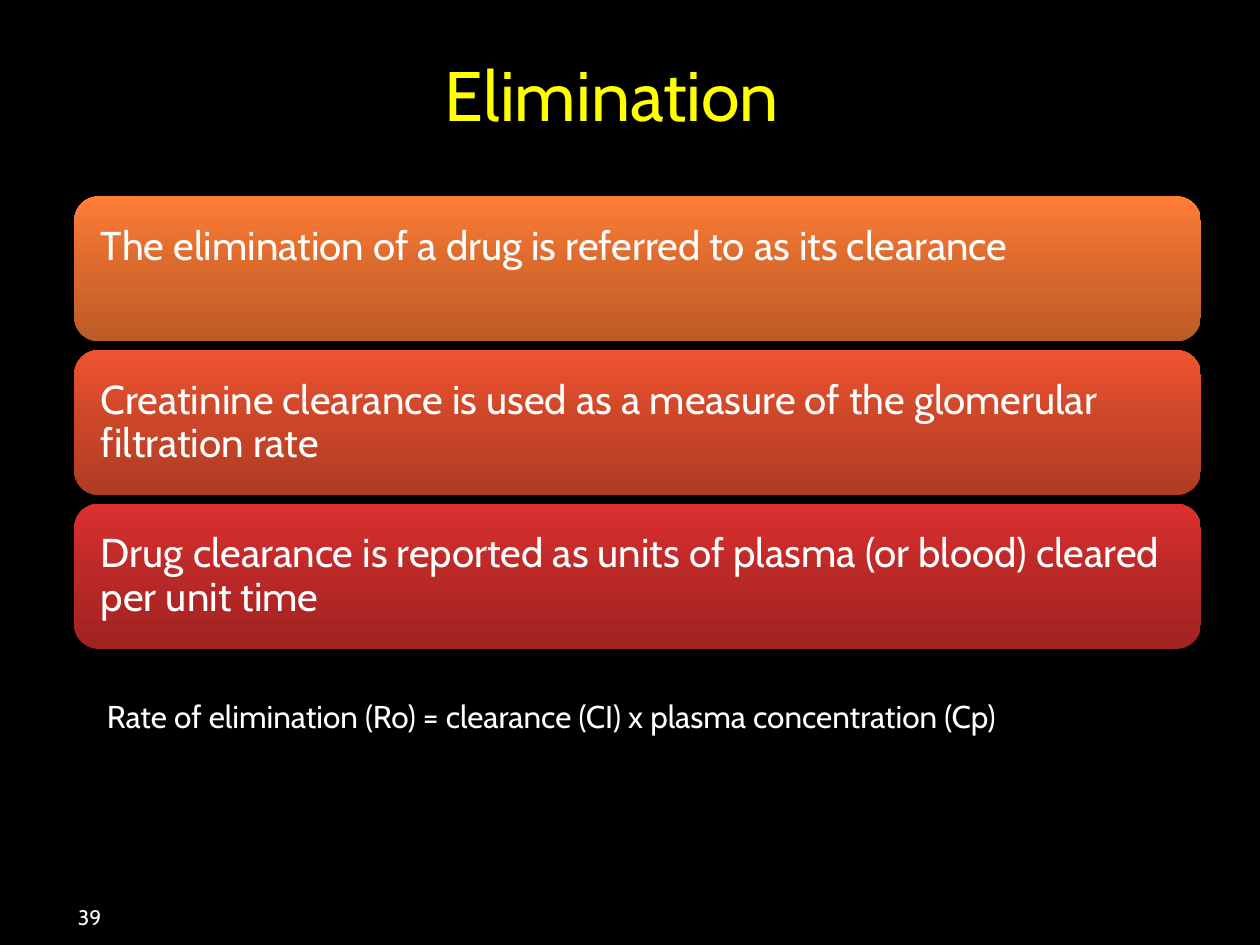
import pptx
import pptx.util
import pptx.dml.color
import pptx.enum.shapes
import pptx.enum.text
import pptx.oxml
import pptx.oxml.ns

Pt = pptx.util.Pt
RGB = pptx.dml.color.RGBColor
Anchor = pptx.enum.text.MSO_ANCHOR
Align = pptx.enum.text.PP_ALIGN

# Content
TITLE = "Elimination"
BARS = [  # text, gradient from bottom to top
    ("The elimination of a drug is referred to as its clearance",
     ("BC5B26", "DD6B2D", "FF7D37")),
    ("Creatinine clearance is used as a measure of the glomerular filtration rate",
     ("AF3C23", "CE4729", "F05330")),
    ("Drug clearance is reported as units of plasma (or blood) cleared per unit time",
     ("A02322", "BC2A28", "DC302F")),
]
RULE = "Rate of elimination (Ro) = clearance (CI) x plasma concentration (Cp)"
PAGE = "39"

# Style
FONT = "Cabin"
BLACK = RGB(0, 0, 0)
WHITE = RGB(255, 255, 255)
YELLOW = RGB(255, 255, 0)
STOPS = (0, 55, 100)

# Bar layout
LEFT, TOP, WIDE, HIGH, STEP = 42.5, 112.3, 643.7, 82.8, 87.85


def write(frame, text, size, color, pads, anchor=Anchor.TOP, wrap=True):
    frame.word_wrap = wrap
    frame.auto_size = pptx.enum.text.MSO_AUTO_SIZE.NONE
    frame.vertical_anchor = anchor
    (frame.margin_left, frame.margin_top,
     frame.margin_right, frame.margin_bottom) = [Pt(p) for p in pads]
    para = frame.paragraphs[0]
    para.alignment = Align.LEFT
    run = para.add_run()
    run.text = text
    run.font.name = FONT
    run.font.size = Pt(size)
    run.font.color.rgb = color
    return para


def shade(shape, colors):
    stops = "".join(
        f'<a:gs pos="{pos * 1000}"><a:srgbClr val="{color}"/></a:gs>'
        for pos, color in zip(STOPS, colors))
    shape.fill.gradient()
    shape.fill.gradient_angle = 90
    grad = shape.element.spPr.find(pptx.oxml.ns.qn("a:gradFill"))
    new = pptx.oxml.parse_xml(
        f'<a:gsLst {pptx.oxml.ns.nsdecls("a")}>{stops}</a:gsLst>')
    grad.replace(grad.find(pptx.oxml.ns.qn("a:gsLst")), new)


def main():
    deck = pptx.Presentation()
    deck.slide_width, deck.slide_height = Pt(720), Pt(540)
    slide = deck.slides.add_slide(deck.slide_layouts[5])
    slide.background.fill.solid()
    slide.background.fill.fore_color.rgb = BLACK
    shapes = slide.shapes

    # Title
    title = shapes.title
    title.left, title.top, title.width, title.height = (
        Pt(247), Pt(26), Pt(212.4), Pt(55.4))
    write(title.text_frame, TITLE, 40, YELLOW, (7.2, 3.6, 7.2, 3.6), wrap=False)

    # Bars: the first text sits high, the others are centred
    for i, (text, colors) in enumerate(BARS):
        bar = shapes.add_shape(
            pptx.enum.shapes.MSO_SHAPE.ROUNDED_RECTANGLE,
            Pt(LEFT), Pt(TOP + i * STEP), Pt(WIDE), Pt(HIGH))
        bar.shadow.inherit = False
        bar.line.fill.background()
        shade(bar, colors)
        pads = (11.2, 11.2 if i else 12.4, 11.2, 11.2)
        para = write(bar.text_frame, text, 23, WHITE, pads,
                     Anchor.MIDDLE if i else Anchor.TOP)
        para.line_spacing = 0.9

    # Formula
    box = shapes.add_textbox(Pt(54), Pt(394.6), Pt(612), Pt(65.5))
    write(box.text_frame, RULE, 18, WHITE, (7.2, 3.6, 7.2, 3.6))

    # Page number
    box = shapes.add_textbox(Pt(36), Pt(509.8), Pt(167.8), Pt(21.6))
    write(box.text_frame, PAGE, 12, WHITE, (8.6, 3.6, 3.6, 0), Anchor.BOTTOM)

    deck.save("out.pptx")


if __name__ == "__main__":
    main()
